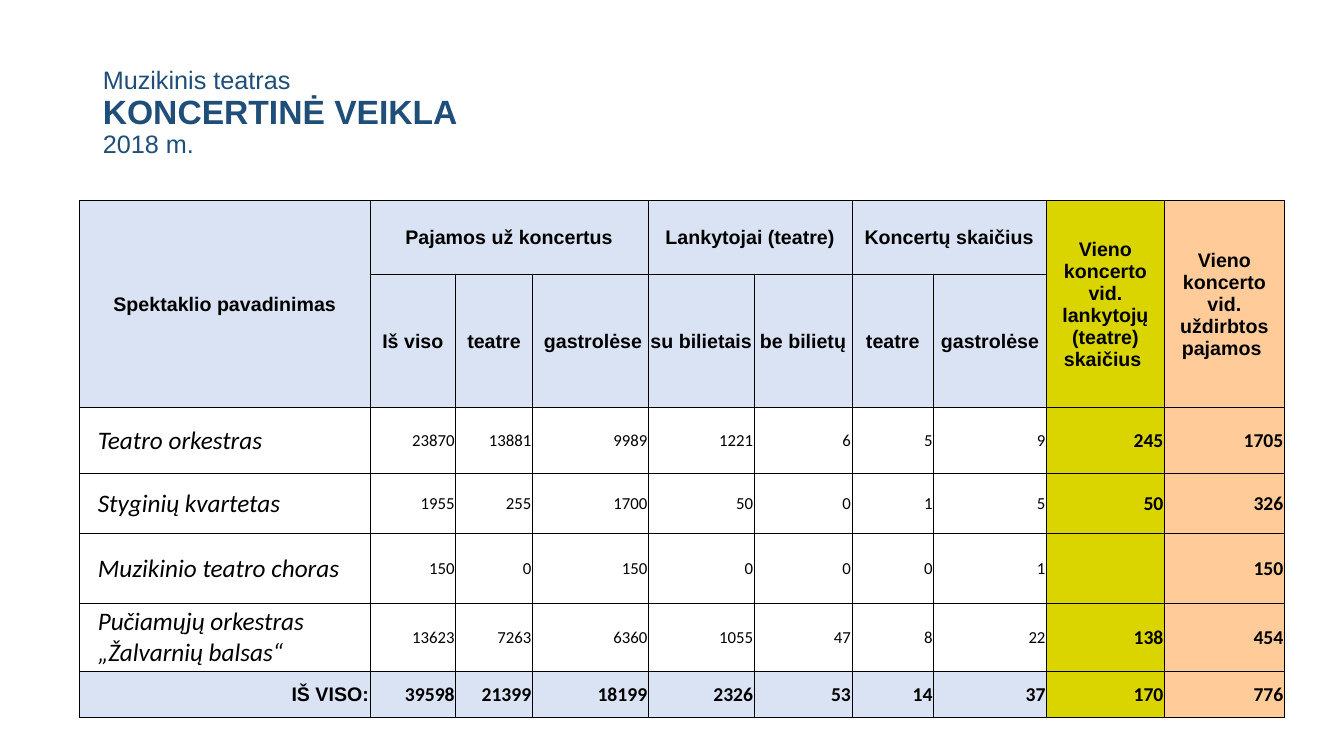
"""Build the 2018 concert activity slide of a music theatre."""
from lxml import etree
from pptx import Presentation, util as u
from pptx.dml import color
from pptx.enum import text
from pptx.oxml import ns

COLORS = {"title": "1F4E79", "ink": "000000", "blue": "DAE3F3", "yellow": "DAD500", "peach": "FFCC99"}
COLUMN_WIDTHS = [288, 85, 76, 115, 105, 97, 81, 112, 117, 119]
ROW_HEIGHTS = [73, 52, 65, 60, 69, 68, 46]
HEADER_ROWS = 2
TOTAL_ROW = len(ROW_HEIGHTS) - 1
YELLOW_COLUMN, PEACH_COLUMN = 8, 9
MERGES = [
    ((0, 0), (1, 0)), ((0, 1), (0, 3)), ((0, 4), (0, 5)),
    ((0, 6), (0, 7)), ((0, 8), (1, 8)), ((0, 9), (1, 9)),
]
CONCERTS = [
    ["Spektaklio pavadinimas", "Pajamos už koncertus", "", "", "Lankytojai (teatre)", "",
     "Koncertų skaičius", "", "Vieno koncerto vid. lankytojų (teatre) skaičius ",
     "Vieno koncerto vid. uždirbtos pajamos "],
    ["", "Iš viso", "teatre", " gastrolėse", "su bilietais", "be bilietų", "teatre", "gastrolėse", "", ""],
    ["Teatro orkestras", 23870, 13881, 9989, 1221, 6, 5, 9, 245, 1705],
    ["Styginių kvartetas", 1955, 255, 1700, 50, 0, 1, 5, 50, 326],
    ["Muzikinio teatro choras", 150, 0, 150, 0, 0, 0, 1, "", 150],
    ["Pučiamųjų orkestras\n„Žalvarnių balsas“", 13623, 7263, 6360, 1055, 47, 8, 22, 138, 454],
    ["IŠ VISO:", 39598, 21399, 18199, 2326, 53, 14, 37, 170, 776],
]


def add_text(paragraph, words, size=14, font="Arial", ink="ink", bold=False, italic=False):
    run = paragraph.add_run()
    run.text = words
    run.font.size = u.Pt(size)
    run.font.name = font
    run.font.bold = bold
    run.font.italic = italic
    run.font.color.rgb = color.RGBColor.from_string(COLORS[ink])


def cell_format(row, column):
    if row < HEADER_ROWS:
        return text.PP_ALIGN.CENTER, dict(bold=True)
    if row == TOTAL_ROW:
        return text.PP_ALIGN.RIGHT, dict(bold=True, font="Arial" if column == 0 else "Calibri")
    if column == 0:
        return text.PP_ALIGN.LEFT, dict(size=18, font="Calibri", italic=True)
    if column >= YELLOW_COLUMN:
        return text.PP_ALIGN.RIGHT, dict(font="Calibri", bold=True)
    return text.PP_ALIGN.RIGHT, dict(size=12, font="Calibri")


def cell_fill(row, column):
    if column in (YELLOW_COLUMN, PEACH_COLUMN):
        return "yellow" if column == YELLOW_COLUMN else "peach"
    return "blue" if row < HEADER_ROWS or row == TOTAL_ROW else None


class SlideBuilder:
    """Hold the grid, the presentation and the current slide."""

    grid_columns, grid_rows = 1333, 750

    def __init__(self):
        self.presentation = Presentation()
        self.presentation.slide_width = u.Inches(13.33)
        self.presentation.slide_height = u.Inches(7.5)
        self.slide = self.presentation.slides.add_slide(self.presentation.slide_layouts[5])

    def across(self, columns):
        return round(self.presentation.slide_width * columns / self.grid_columns)

    def down(self, rows):
        return round(self.presentation.slide_height * rows / self.grid_rows)

    def box(self, left, top, width, height):
        return self.across(left), self.down(top), self.across(width), self.down(height)

    def title(self, lines, *place):
        title = self.slide.shapes.title
        title.left, title.top, title.width, title.height = self.box(*place)
        frame = title.text_frame
        frame.auto_size = text.MSO_AUTO_SIZE.NONE
        frame.vertical_anchor = text.MSO_ANCHOR.MIDDLE
        paragraph = frame.paragraphs[0]
        paragraph.alignment = text.PP_ALIGN.LEFT
        paragraph.line_spacing = 0.9
        for index, (words, style) in enumerate(lines):
            if index:
                paragraph.add_line_break()
            add_text(paragraph, words, ink="title", **style)

    def borders(self, cell):
        properties = cell._tc.get_or_add_tcPr()
        for index, side in enumerate(("lnL", "lnR", "lnT", "lnB")):
            line = etree.Element(ns.qn(f"a:{side}"), w=str(u.Pt(0.5)))
            fill = etree.SubElement(line, ns.qn("a:solidFill"))
            etree.SubElement(fill, ns.qn("a:srgbClr"), val=COLORS["ink"])
            properties.insert(index, line)

    def cell(self, cell, row, column, words):
        alignment, style = cell_format(row, column)
        fill = cell_fill(row, column)
        cell.vertical_anchor = text.MSO_ANCHOR.MIDDLE
        named = column == 0 and HEADER_ROWS <= row < TOTAL_ROW
        cell.margin_left = self.across(18 if named else 1)
        cell.margin_right = self.across(1)
        cell.margin_top = self.down(1)
        cell.margin_bottom = 0
        if fill:
            cell.fill.solid()
            cell.fill.fore_color.rgb = color.RGBColor.from_string(COLORS[fill])
        else:
            cell.fill.background()
        self.borders(cell)
        for index, line in enumerate(words.splitlines()):
            frame = cell.text_frame
            paragraph = frame.add_paragraph() if index else frame.paragraphs[0]
            paragraph.alignment = alignment
            add_text(paragraph, line, **style)

    def table(self, values, left, top):
        place = self.box(left, top, sum(COLUMN_WIDTHS), sum(ROW_HEIGHTS))
        table = self.slide.shapes.add_table(len(ROW_HEIGHTS), len(COLUMN_WIDTHS), *place).table
        table.first_row = table.horz_banding = False
        for column, width in zip(table.columns, COLUMN_WIDTHS):
            column.width = self.across(width)
        for row, height in zip(table.rows, ROW_HEIGHTS):
            row.height = self.down(height)
        for first, last in MERGES:
            table.cell(*first).merge(table.cell(*last))
        for row, entries in enumerate(values):
            for column, entry in enumerate(entries):
                self.cell(table.cell(row, column), row, column, str(entry))


def main():
    builder = SlideBuilder()
    builder.title([
        ("Muzikinis teatras", dict(size=18)),
        ("KONCERTINĖ VEIKLA", dict(size=24, bold=True)),
        ("2018 m.", dict(size=18)),
    ], 92, 40, 1150, 145)
    builder.table(CONCERTS, 79, 199)
    builder.presentation.save("out.pptx")


if __name__ == "__main__":
    main()
